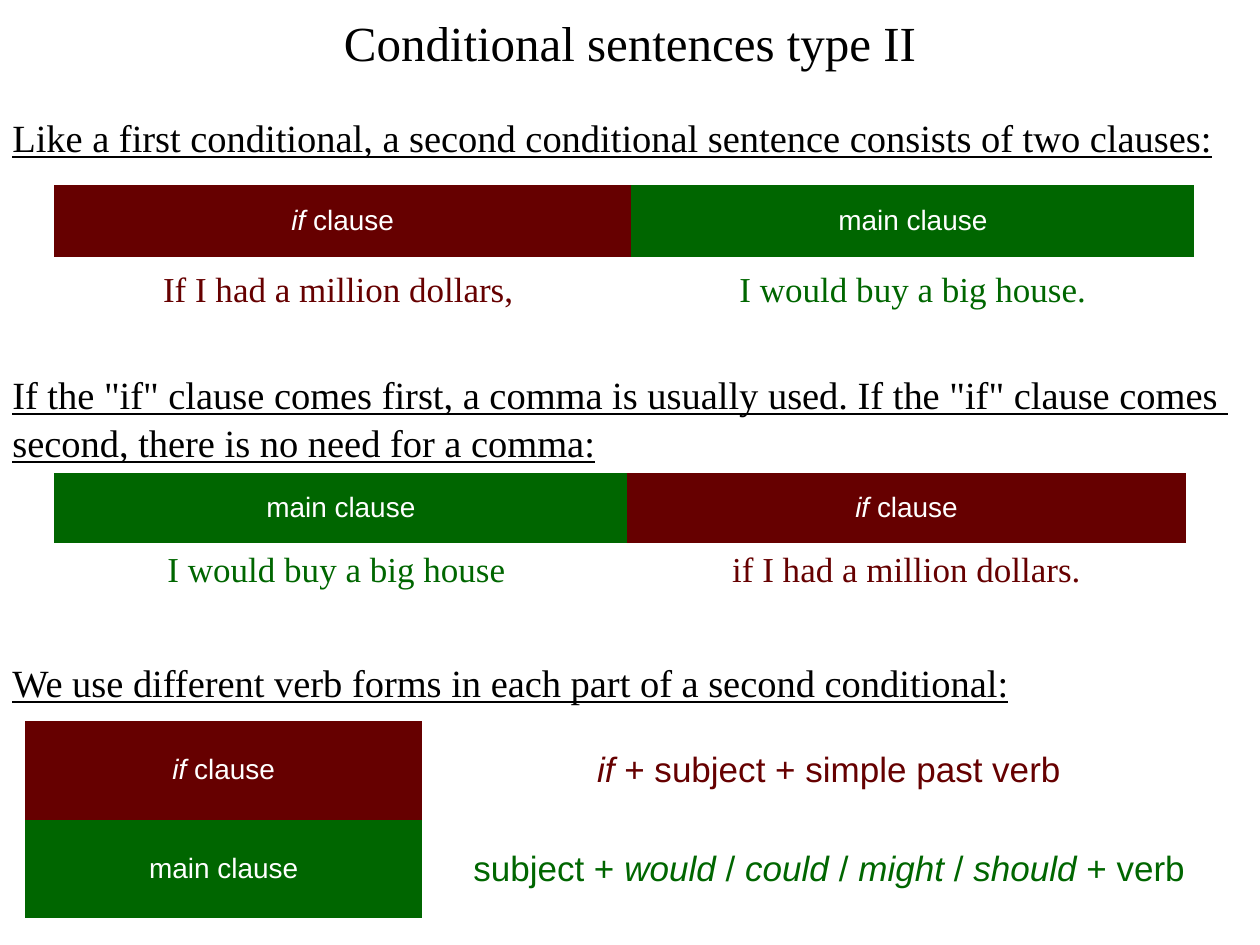
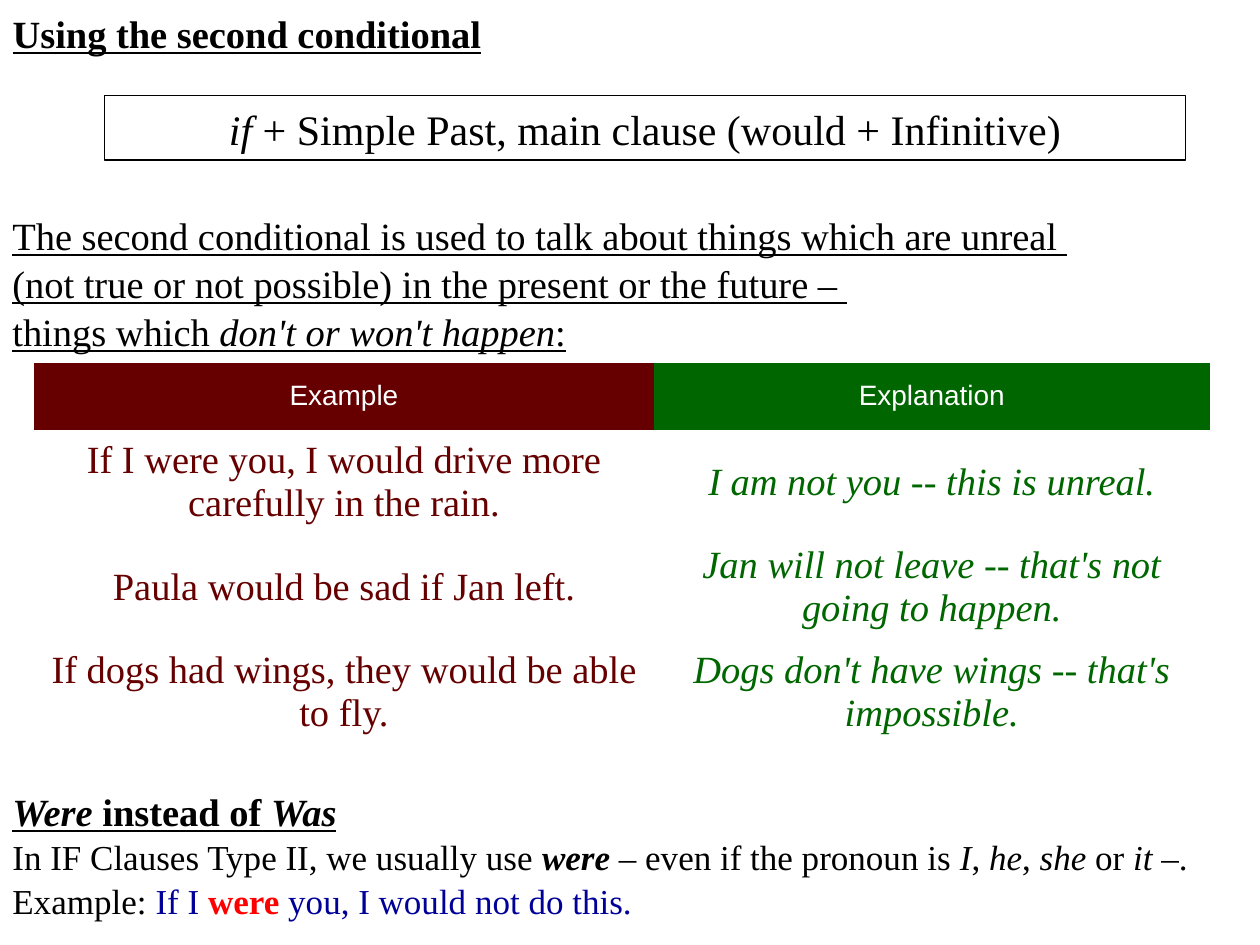
from dataclasses import dataclass

from pptx import Presentation
from pptx.dml.color import RGBColor
from pptx.enum.shapes import MSO_SHAPE
from pptx.enum.text import MSO_ANCHOR, PP_ALIGN
from pptx.oxml.ns import qn
from pptx.util import Inches, Pt

BLACK = RGBColor(0x00, 0x00, 0x00)
WHITE = RGBColor(0xFF, 0xFF, 0xFF)
MAROON = RGBColor(0x66, 0x00, 0x00)
GREEN = RGBColor(0x00, 0x66, 0x00)
BLUE = RGBColor(0x00, 0x00, 0x99)
RED = RGBColor(0xFF, 0x00, 0x00)

SERIF = "Times New Roman"
SANS = "Arial"
NO_GRID = "{2D5ABB26-0587-4C30-8999-92F81FD0307C}"
LEADING = 1.04
COLS, ROWS = 100, 75
UNIT = Inches(0.1)


@dataclass
class Cell:
    text: str
    ink: RGBColor
    fill: RGBColor = WHITE
    size: int = 20
    face: str = SERIF


def label(text, fill):
    return Cell(text, WHITE, fill, 16, SANS)


def span(*units):
    """Turn grid columns and rows into lengths."""
    return [round(unit * UNIT) for unit in units]


def style(para, size, ink=BLACK, face=SERIF, bold=False, under=False,
          align=PP_ALIGN.LEFT):
    para.alignment = align
    font = para.font
    font.size, font.name = Pt(size), face
    font.bold, font.underline = bold, under
    font.color.rgb = ink


def write(para, text, ink=None, bold=None):
    """Add runs; text between asterisks is italic."""
    for turn, part in enumerate(text.split("*")):
        if part:
            run = para.add_run()
            run.text = part
            if turn % 2:
                run.font.italic = True
            if bold:
                run.font.bold = True
            if ink is not None:
                run.font.color.rgb = ink


def add_title(slide, text, place, size, **look):
    title = slide.shapes.title
    title.left, title.top, title.width, title.height = span(*place)
    frame = title.text_frame
    frame.vertical_anchor = MSO_ANCHOR.TOP
    para = frame.paragraphs[0]
    write(para, text)
    style(para, size, **look)


def add_box(slide, place):
    frame = slide.shapes.add_textbox(*span(*place)).text_frame
    frame.word_wrap = True
    return frame


def add_line(frame, size, **look):
    """Use the empty first paragraph, or add another."""
    para = frame.paragraphs[0]
    if para.runs:
        para = frame.add_paragraph()
    style(para, size, **look)
    para.line_spacing = LEADING
    return para


def add_lead(slide, top, lines):
    """Place an underlined lead-in across the slide."""
    frame = add_box(slide, (0, top, COLS, 3.8 * len(lines) + 1))
    for text in lines:
        write(add_line(frame, 22, under=True), text)


def add_grid(slide, left, top, cols, rows, cells):
    place = span(left, top, sum(cols), sum(rows))
    table = slide.shapes.add_table(len(rows), len(cols), *place).table
    table._tbl.tblPr.find(qn("a:tableStyleId")).text = NO_GRID
    table.first_row = table.horz_banding = False
    for col, width in zip(table.columns, span(*cols)):
        col.width = width
    for row, height, line in zip(table.rows, span(*rows), cells):
        row.height = height
        for cell, item in zip(row.cells, line):
            cell.fill.solid()
            cell.fill.fore_color.rgb = item.fill
            cell.vertical_anchor = MSO_ANCHOR.MIDDLE
            para = cell.text_frame.paragraphs[0]
            write(para, item.text)
            style(para, item.size, item.ink, item.face,
                  align=PP_ALIGN.CENTER)


def add_rule(slide, text, place):
    """Draw a formula in an outlined frame."""
    rect = slide.shapes.add_shape(MSO_SHAPE.RECTANGLE, *span(*place))
    rect.shadow.inherit = False
    rect.fill.background()
    rect.line.color.rgb = BLACK
    rect.line.width = Pt(0.75)
    write(add_line(rect.text_frame, 24, align=PP_ALIGN.CENTER), text)


def add_forms(slide):
    add_title(slide, "Conditional sentences type II", (0, 0.5, COLS, 8.5),
              28, align=PP_ALIGN.CENTER)
    cond = label("*if* clause", MAROON)
    main_part = label("main clause", GREEN)

    add_lead(slide, 8.4, ["Like a first conditional, a second conditional "
                          "sentence consists of two clauses:"])
    add_grid(slide, 4.3, 14.7, (45.8, 44.7), (5.7, 5.4), [
        (cond, main_part),
        (Cell("If I had a million dollars, ", MAROON),
         Cell("I would buy a big house.", GREEN))])

    add_lead(slide, 28.8, [
        'If the "if" clause comes first, a comma is usually used. '
        'If the "if" clause comes ',
        "second, there is no need for a comma:"])
    add_grid(slide, 4.3, 37.5, (45.5, 44.3), (5.6, 4.3), [
        (main_part, cond),
        (Cell("I would buy a big house ", GREEN),
         Cell("if I had a million dollars.", MAROON))])

    add_lead(slide, 51.7, ["We use different verb forms in each part of "
                           "a second conditional:"])
    add_grid(slide, 2, 57.2, (31.5, 64.6), (7.85, 7.85), [
        (cond, Cell("*if* + subject + simple past verb", MAROON, face=SANS)),
        (main_part, Cell("subject + *would* / *could */ *might */ *should *"
                         "+ verb", GREEN, face=SANS))])


def add_uses(slide):
    add_title(slide, "Using the second conditional", (0, 0.3, COLS, 4.7),
              22, bold=True, under=True)
    add_rule(slide, "*if* + Simple Past, main clause (would + Infinitive)",
             (8.3, 7.6, 85.8, 5.1))
    add_lead(slide, 16.2, [
        "The second conditional is used to talk about things which "
        "are unreal ",
        "(not true or not possible) in the present or the future – ",
        "things which *don't or won't happen*:"])

    pairs = [
        ("If I were you, I would drive more carefully in the rain.",
         "I am not you -- this is unreal."),
        ("Paula would be sad if Jan left.",
         "Jan will not leave -- that's not going to happen."),
        ("If dogs had wings, they would be able to fly.",
         "Dogs don't have wings -- that's impossible.")]
    cells = [(label("Example", MAROON), label("Explanation", GREEN))]
    cells += [(Cell(case, MAROON, size=22),
               Cell(f"*{why}*", GREEN, size=22)) for case, why in pairs]
    add_grid(slide, 2.7, 28.8, (49.2, 44.1), (5.3, 8.3, 8.3, 8.3), cells)

    note = add_box(slide, (0, 61.9, COLS, 11.3))
    write(add_line(note, 22, bold=True, under=True),
          "*Were* instead of *Was*")
    usage = add_line(note, 20)
    write(usage, "In IF Clauses Type II, we usually use ")
    write(usage, "*were*", bold=True)
    write(usage, " – even if the pronoun is *I*, *he*, *she* or *it* –.")
    sample = add_line(note, 20)
    write(sample, "Example: ")
    write(sample, "If I ", BLUE)
    write(sample, "were", RED, bold=True)
    write(sample, " you, I would not do this.", BLUE)


def main():
    deck = Presentation()
    deck.slide_width, deck.slide_height = span(COLS, ROWS)
    for build in (add_forms, add_uses):
        build(deck.slides.add_slide(deck.slide_layouts[5]))
    deck.save("out.pptx")


if __name__ == "__main__":
    main()
